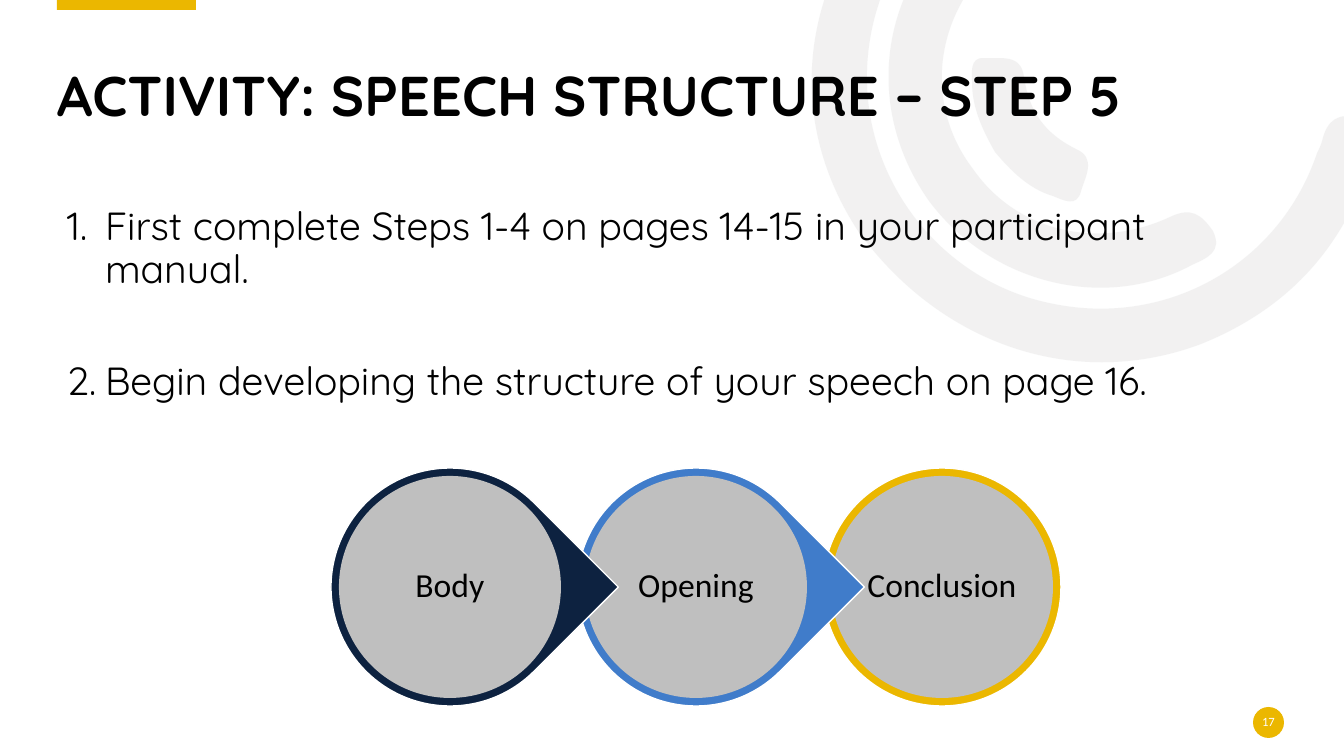
import math
from dataclasses import dataclass

from lxml import etree
from pptx import Presentation
from pptx.dml.color import RGBColor
from pptx.enum.shapes import MSO_SHAPE
from pptx.enum.text import MSO_ANCHOR, MSO_AUTO_SIZE, PP_ALIGN
from pptx.oxml.ns import qn
from pptx.util import Pt

RECTANGLE, ELLIPSE, TEARDROP = MSO_SHAPE.RECTANGLE, MSO_SHAPE.OVAL, MSO_SHAPE.TEAR
TOP, MIDDLE, BOTTOM = MSO_ANCHOR.TOP, MSO_ANCHOR.MIDDLE, MSO_ANCHOR.BOTTOM
LEFT, CENTER = PP_ALIGN.LEFT, PP_ALIGN.CENTER
NO_AUTOFIT = MSO_AUTO_SIZE.NONE


@dataclass(frozen=True)
class Theme:
    gold: str = "EBB700"
    navy: str = "0D2240"
    blue: str = "407CCA"
    disc: str = "BFBFBF"
    swirl: str = "E7E6E6"
    swirl_alpha: int = 53
    text: str = "000000"
    white: str = "FFFFFF"
    heading_font: str = "Quicksand"
    label_font: str = "Calibri"
    title_size: int = 40
    body_size: int = 28
    label_size: int = 24
    number_size: int = 9


THEME = Theme()

TITLE = "ACTIVITY: SPEECH STRUCTURE – STEP 5"
INSTRUCTIONS = [
    "First complete Steps 1-4 on pages 14-15 in your participant manual.",
    "Begin developing the structure of your speech on page 16.",
]
STAGES = [
    ("Body", THEME.navy, TEARDROP),
    ("Opening", THEME.blue, TEARDROP),
    ("Conclusion", THEME.gold, ELLIPSE),
]
PAGE_NUMBER = "17"

SWIRLS = [
    ((858, 231), [
        (805, 150, 793, 50, 845, -50),
        (898, -153, 984, -205, 1099, -209),
        (1114, -209, 1130, -212, 1140, -197),
        (1153, -176, 1136, -155, 1107, -155),
        (975, -155, 872, -59, 867, 69),
        (863, 182, 943, 283, 1054, 304),
        (1169, 327, 1280, 263, 1317, 153),
        (1319, 149, 1321, 145, 1322, 141),
        (1327, 120, 1338, 112, 1360, 118),
        (1384, 125, 1378, 142, 1372, 157),
        (1345, 247, 1288, 309, 1201, 344),
        (1079, 390, 943, 348, 858, 231),
    ]),
    ((929, 201), [
        (869, 116, 876, 7, 948, -69),
        (959, -80, 970, -96, 988, -79),
        (1003, -65, 1005, -50, 987, -32),
        (932, 26, 927, 109, 973, 169),
        (1016, 231, 1097, 251, 1170, 217),
        (1191, 207, 1201, 214, 1213, 231),
        (1223, 252, 1207, 258, 1192, 265),
        (1105, 312, 991, 284, 929, 201),
    ]),
    ((995, 152), [
        (983, 131, 972, 108, 972, 83),
        (972, 74, 969, 57, 984, 58),
        (1000, 59, 1021, 53, 1024, 77),
        (1029, 111, 1044, 133, 1076, 149),
        (1097, 158, 1085, 177, 1081, 191),
        (1077, 208, 1063, 200, 1053, 196),
        (1029, 189, 1011, 171, 995, 152),
    ]),
]
SWIRL_ANGLE = 144.2

EMU_PER_PX = 914400 / 100.8
SLIDE_WIDTH, SLIDE_HEIGHT = 1344, 756
MARGIN = 57
LIST_INDENT = 38
LIST_GAP = 50
RING_LEFT, RING_TOP, RING_SIZE, RING_PITCH = 331, 468, 238, 246
RING_BAND = 8


def px(length):
    return round(length * EMU_PER_PX)


def color(value):
    return RGBColor.from_string(value)


def paint(shape, fill, outline=None):
    shape.shadow.inherit = False
    shape.fill.solid()
    shape.fill.fore_color.rgb = color(fill)
    if outline:
        shape.line.color.rgb = color(outline)
        shape.line.width = Pt(1)
    else:
        shape.line.fill.background()


def add_shape(slide, kind, box, fill, outline=None):
    shape = slide.shapes.add_shape(kind, *map(px, box))
    paint(shape, fill, outline)
    return shape


def set_frame(shape, anchor, inset=0):
    frame = shape.text_frame
    frame.word_wrap = True
    frame.auto_size = NO_AUTOFIT
    frame.vertical_anchor = anchor
    frame.margin_left = frame.margin_right = px(inset)
    frame.margin_top = frame.margin_bottom = px(inset / 2)
    return frame


def write(paragraph, text, font, size, ink=THEME.text, align=LEFT, bold=False):
    paragraph.alignment = align
    paragraph.line_spacing = 0.9
    run = paragraph.add_run()
    run.text = text
    run.font.name = font
    run.font.size = Pt(size)
    run.font.bold = bold
    run.font.color.rgb = color(ink)


def spin(x, y, degrees):
    cosine, sine = math.cos(math.radians(degrees)), math.sin(math.radians(degrees))
    return round(x * cosine - y * sine), round(x * sine + y * cosine)


def upright(x, y):
    return spin(px(x), px(y), -SWIRL_ANGLE)


def add_swirl(slide, start, curves):
    builder = slide.shapes.build_freeform(*upright(*start))
    builder.add_line_segments([upright(*curve[4:]) for curve in curves], close=True)
    swirl = builder.convert_to_shape()
    for segment, curve in zip(list(swirl.element.iter(qn("a:lnTo"))), curves):
        segment.tag = qn("a:cubicBezTo")
        for position, control in enumerate((curve[:2], curve[2:4])):
            x, y = upright(*control)
            point = etree.Element(qn("a:pt"), x=str(x - swirl.left), y=str(y - swirl.top))
            segment.insert(position, point)
    center_x, center_y = spin(
        swirl.left + swirl.width / 2, swirl.top + swirl.height / 2, SWIRL_ANGLE
    )
    swirl.left = round(center_x - swirl.width / 2)
    swirl.top = round(center_y - swirl.height / 2)
    swirl.rotation = SWIRL_ANGLE
    paint(swirl, THEME.swirl)
    tint = swirl.element.spPr.find(qn("a:solidFill"))[0]
    etree.SubElement(tint, qn("a:alpha"), val=str(THEME.swirl_alpha * 1000))


def add_title(slide):
    title = slide.shapes.title
    title.left, title.top, title.width, title.height = map(px, (MARGIN, 27, 1229, 102))
    frame = set_frame(title, BOTTOM)
    write(frame.paragraphs[0], TITLE, THEME.heading_font, THEME.title_size, bold=True)
    title.element.getparent().append(title.element)


def add_instructions(slide):
    box = slide.shapes.add_textbox(*map(px, (MARGIN, 202, 1194, 248)))
    frame = set_frame(box, TOP, 10)
    for index, text in enumerate(INSTRUCTIONS):
        paragraph = frame.add_paragraph() if index else frame.paragraphs[0]
        properties = paragraph._p.get_or_add_pPr()
        properties.set("marL", str(px(LIST_INDENT)))
        properties.set("indent", str(-px(LIST_INDENT)))
        etree.SubElement(properties, qn("a:buFont"), typeface="+mj-lt")
        etree.SubElement(properties, qn("a:buAutoNum"), type="arabicPeriod")
        paragraph.space_before = Pt(LIST_GAP if index else 0)
        write(paragraph, text, THEME.heading_font, THEME.body_size)


def add_stage(slide, index, label, ring_color, kind):
    left = RING_LEFT + index * RING_PITCH
    ring = add_shape(slide, kind, (left, RING_TOP, RING_SIZE, RING_SIZE), ring_color, THEME.white)
    if kind == TEARDROP:
        ring.adjustments[0] = 1
        ring.rotation = 45
    disc_size = RING_SIZE - 2 * RING_BAND
    disc_box = (left + RING_BAND, RING_TOP + RING_BAND, disc_size, disc_size)
    disc = add_shape(slide, ELLIPSE, disc_box, THEME.disc)
    paragraph = set_frame(disc, MIDDLE).paragraphs[0]
    write(paragraph, label, THEME.label_font, THEME.label_size, align=CENTER)


def main():
    presentation = Presentation()
    presentation.slide_width, presentation.slide_height = px(SLIDE_WIDTH), px(SLIDE_HEIGHT)
    slide = presentation.slides.add_slide(presentation.slide_layouts[5])
    for start, curves in SWIRLS:
        add_swirl(slide, start, curves)
    add_shape(slide, RECTANGLE, (MARGIN, -2, 139, 12), THEME.gold)
    badge = add_shape(slide, ELLIPSE, (1253, 707, 31, 31), THEME.gold)
    paragraph = set_frame(badge, MIDDLE).paragraphs[0]
    write(paragraph, PAGE_NUMBER, THEME.label_font, THEME.number_size, THEME.white, CENTER)
    add_instructions(slide)
    add_title(slide)
    for index, stage in reversed(list(enumerate(STAGES))):
        add_stage(slide, index, *stage)
    presentation.save("out.pptx")


if __name__ == "__main__":
    main()
